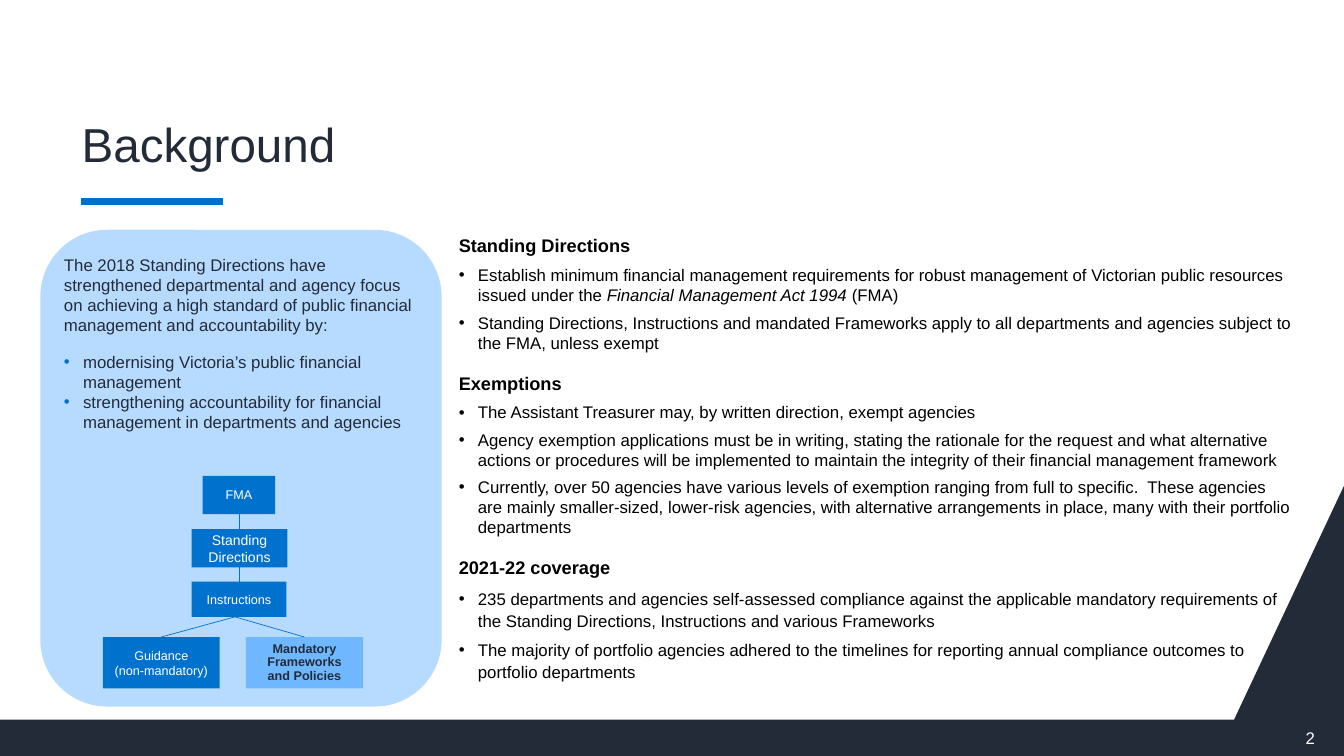
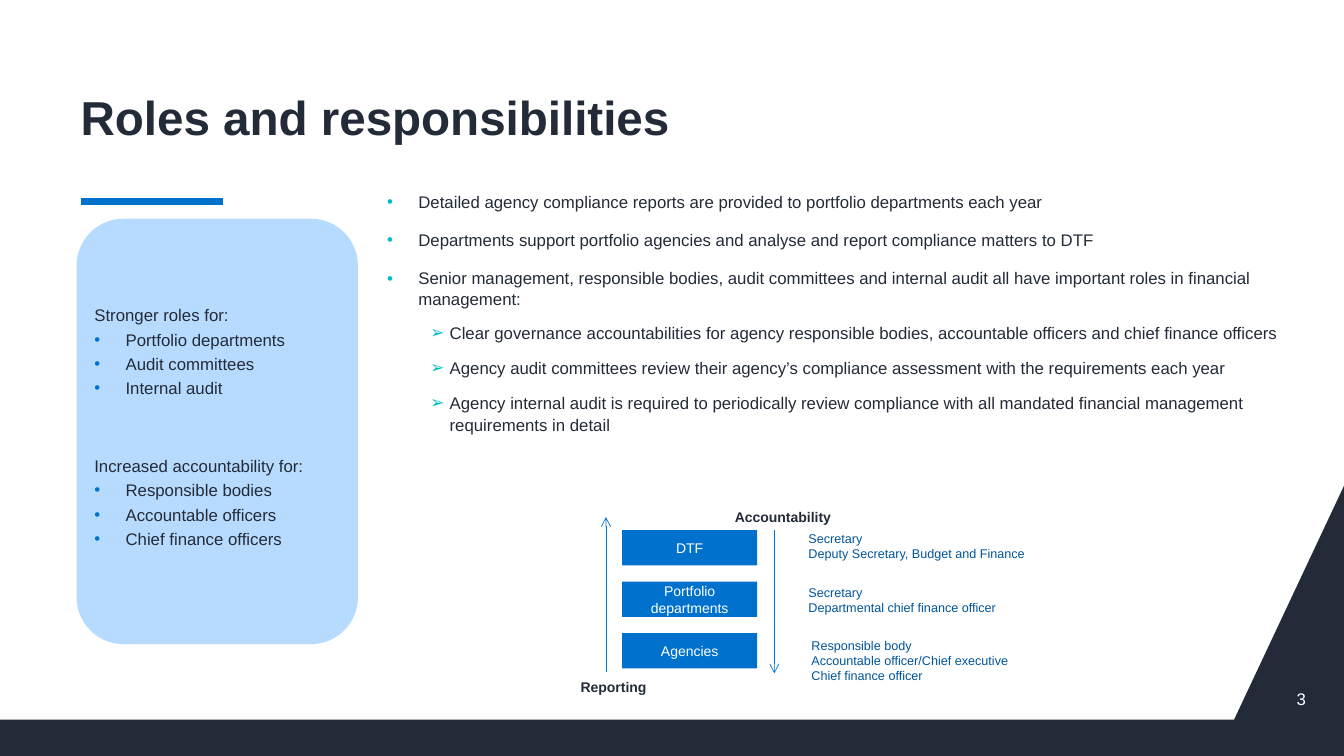
import pptx
import pptx.dml.color
import pptx.enum.shapes
import pptx.enum.text
import pptx.oxml
import pptx.oxml.ns
import pptx.util
from pptx.util import Inches, Pt

RGBColor = pptx.dml.color.RGBColor
ALIGN = pptx.enum.text.PP_ALIGN
ANCHOR = pptx.enum.text.MSO_ANCHOR
SHAPE = pptx.enum.shapes.MSO_SHAPE

NAVY = RGBColor(0x23, 0x2B, 0x39)
BLUE = RGBColor(0x00, 0x72, 0xCE)
SKY = RGBColor(0x6F, 0xB8, 0xFF)
PALE = RGBColor(0xB7, 0xDB, 0xFF)
DEEP = RGBColor(0x00, 0x55, 0x9B)
TEAL = RGBColor(0x00, 0xBA, 0xC7)
BLACK = RGBColor(0, 0, 0)
WHITE = RGBColor(0xFF, 0xFF, 0xFF)

FONT = "Arial"
SLIDE_WIDTH, SLIDE_HEIGHT = 13.33, 7.5
BAND_TOP = 7.14
TIGHT = {"margin_left": Inches(0.04), "margin_right": Inches(0.04),
         "margin_top": Inches(0.05), "margin_bottom": Inches(0.05)}
MIDDLE = {"vertical_anchor": ANCHOR.MIDDLE}


def style(size, color, bold=False, bullet=None, **layout):
    return {"font": {"name": FONT, "size": Pt(size), "bold": bold},
            "color": color, "bullet": bullet, "layout": layout}


TITLE = style(34, NAVY, line_spacing=0.9)
BOLD_TITLE = style(34, NAVY, True, line_spacing=0.9)
NUMBER = style(12, WHITE, alignment=ALIGN.RIGHT)
HEADING = style(13, BLACK, True, space_before=Pt(10.7), space_after=Pt(4))
POINT = style(12, BLACK, bullet=("•", None, 0.19, 0.19),
              space_before=Pt(2), space_after=Pt(3))
LOOSE_POINT = style(12, BLACK, bullet=("•", None, 0.19, 0.19),
                    space_before=Pt(2), space_after=Pt(3), line_spacing=1.1)
PANEL_INTRO = style(12, NAVY, space_after=Pt(12))
PANEL_POINT = style(12, NAVY, bullet=("•", BLUE, 0.19, 0.19))
ROLE_HEADING = style(12, NAVY, space_before=Pt(38), space_after=Pt(3))
ROLE_POINT = style(12, NAVY, bullet=("•", BLUE, 0.31, 0.31), space_after=Pt(3))
DUTY = style(12, NAVY, bullet=("•", TEAL, 0.31, 0.31),
             space_before=Pt(10), space_after=Pt(3))
SUB_DUTY = style(12, NAVY, bullet=("➢", TEAL, 0.62, 0.19), line_spacing=1.1,
                 space_before=Pt(6), space_after=Pt(3))
NODE = style(9, WHITE, alignment=ALIGN.CENTER)
LARGE_NODE = style(10, WHITE, alignment=ALIGN.CENTER)
LIGHT_NODE = style(9, NAVY, True, alignment=ALIGN.CENTER, line_spacing=0.9)
ARROW_LABEL = style(10, NAVY, True)
CONTACT = style(9, DEEP)


def assign(target, values):
    for name, value in values.items():
        setattr(target, name, value)


def add_element(parent, tag, **attributes):
    element = pptx.oxml.parse_xml(f"<a:{tag} {pptx.oxml.ns.nsdecls('a')}/>")
    for name, value in attributes.items():
        element.set(name, value)
    parent.append(element)
    return element


def add_bullet(para, mark, color, left, hanging):
    properties = para._p.get_or_add_pPr()
    properties.set("marL", str(Inches(left)))
    properties.set("indent", str(-Inches(hanging)))
    if color is not None:
        add_element(add_element(properties, "buClr"), "srgbClr", val=str(color))
    add_element(properties, "buFont", typeface=FONT)
    add_element(properties, "buChar", char=mark)


def write(frame, groups, frame_format):
    assign(frame, {"word_wrap": True, **frame_format})
    lines = [(look, text) for look, texts in groups for text in texts]
    for index, (look, text) in enumerate(lines):
        para = frame.add_paragraph() if index else frame.paragraphs[0]
        assign(para, {"alignment": ALIGN.LEFT, **look["layout"]})
        if look["bullet"]:
            add_bullet(para, *look["bullet"])
        spans = [(text, False)] if isinstance(text, str) else text
        for words, italic in spans:
            span = para.add_run()
            span.text = words
            assign(span.font, {**look["font"], "italic": italic})
            span.font.color.rgb = look["color"]


def add_text(page, place, groups, frame_format=None):
    box = page.shapes.add_textbox(*map(Inches, place))
    write(box.text_frame, groups, frame_format or {})


def paint(shape, fill):
    shape.shadow.inherit = False
    shape.fill.solid()
    shape.fill.fore_color.rgb = fill
    shape.line.fill.background()


def add_box(page, kind, place, fill, groups, frame_format):
    box = page.shapes.add_shape(kind, *map(Inches, place))
    paint(box, fill)
    write(box.text_frame, groups, frame_format)


def add_panel(page, place, groups, top_margin=0.05):
    add_box(page, SHAPE.ROUNDED_RECTANGLE, place, PALE, groups,
            {**TIGHT, "margin_top": Inches(top_margin), "vertical_anchor": ANCHOR.TOP})


def add_node(page, place, look, lines, fill=BLUE):
    add_box(page, SHAPE.RECTANGLE, place, fill, [(look, lines)], MIDDLE)


def add_line(page, start, end, width=0.5, arrow=False):
    line = page.shapes.add_connector(pptx.enum.shapes.MSO_CONNECTOR.STRAIGHT,
                                     *map(Inches, (*start, *end)))
    line.line.color.rgb = BLUE
    line.line.width = Pt(width)
    if arrow:
        add_element(line.line._get_or_add_ln(), "tailEnd", type="arrow")
    add_element(line._element.spPr, "effectLst")


def add_page(deck, title, title_place, title_look, number, number_place):
    page = deck.slides.add_slide(deck.slide_layouts[6])
    outline = [(12.24, BAND_TOP), (0, BAND_TOP), (0, SLIDE_HEIGHT),
               (SLIDE_WIDTH, SLIDE_HEIGHT), (SLIDE_WIDTH, 4.82)]
    points = [(Inches(x), Inches(y)) for x, y in outline]
    builder = page.shapes.build_freeform(*points[0])
    builder.add_line_segments(points[1:], close=True)
    paint(builder.convert_to_shape(), NAVY)
    add_line(page, (0.8, 2), (2.21, 2), 4.5)
    add_text(page, title_place, [(title_look, [title])],
             {**TIGHT, "vertical_anchor": ANCHOR.BOTTOM})
    add_text(page, (*number_place, 0.48, 0.4), [(NUMBER, [number])], MIDDLE)
    return page


def add_background(deck):
    page = add_page(deck, "Background", (0.77, 0.92, 3.24, 0.84), TITLE,
                    "2", (12.66, 7.12))
    add_text(page, (4.51, 2.28, 8.35, 4.73), [
        (HEADING, ["Standing Directions"]),
        (POINT, [
            [("Establish minimum financial management requirements for robust management of "
              "Victorian public resources issued under the ", False),
             ("Financial Management Act 1994 ", True), ("(FMA)", False)],
            "Standing Directions, Instructions and mandated Frameworks apply to all departments "
            "and agencies subject to the FMA, unless exempt"]),
        (HEADING, ["Exemptions"]),
        (POINT, [
            "The Assistant Treasurer may, by written direction, exempt agencies",
            "Agency exemption applications must be in writing, stating the rationale for the "
            "request and what alternative actions or procedures will be implemented to maintain "
            "the integrity of their financial management framework",
            "Currently, over 50 agencies have various levels of exemption ranging from full to "
            "specific.  These agencies are mainly smaller-sized, lower-risk agencies, with "
            "alternative arrangements in place, many with their portfolio departments"]),
        (HEADING, ["2021-22 coverage"]),
        (LOOSE_POINT, [
            "235 departments and agencies self-assessed compliance against the applicable "
            "mandatory requirements of the Standing Directions, Instructions and various Frameworks",
            "The majority of portfolio agencies adhered to the timelines for reporting annual "
            "compliance outcomes to portfolio departments"]),
    ], TIGHT)
    add_panel(page, (0.4, 2.28, 3.98, 4.73), [
        (PANEL_INTRO, [
            "The 2018 Standing Directions have strengthened departmental and agency focus on "
            "achieving a high standard of public financial management and accountability by:"]),
        (PANEL_POINT, [
            "modernising Victoria’s public financial management",
            "strengthening accountability for financial management in departments and agencies"]),
    ])
    add_node(page, (2.01, 4.72, 0.72, 0.38), NODE, ["FMA"])
    add_node(page, (1.9, 5.25, 0.95, 0.38), LARGE_NODE, ["Standing", "Directions"])
    add_node(page, (1.9, 5.77, 0.94, 0.35), NODE, ["Instructions"])
    add_node(page, (1.02, 6.32, 1.16, 0.51), NODE, ["Guidance", "(non-mandatory)"])
    add_node(page, (2.44, 6.32, 1.16, 0.51), LIGHT_NODE,
             ["Mandatory Frameworks and Policies"], SKY)
    for start, end in [((2.37, 5.1), (2.37, 5.25)), ((2.37, 5.63), (2.37, 5.77)),
                       ((2.33, 6.12), (1.6, 6.32)), ((2.33, 6.12), (3.02, 6.32))]:
        add_line(page, start, end)


def add_roles(deck):
    page = add_page(deck, "Roles and responsibilities", (0.76, 0.37, 11.5, 1.13), BOLD_TITLE,
                    "3", (12.57, 6.73))
    add_text(page, (3.8, 1.85, 9.34, 5.1), [
        (DUTY, [
            "Detailed agency compliance reports are provided to portfolio departments each year",
            "Departments support portfolio agencies and analyse and report compliance matters to DTF",
            "Senior management, responsible bodies, audit committees and internal audit all have "
            "important roles in financial management:"]),
        (SUB_DUTY, [
            "Clear governance accountabilities for agency responsible bodies, accountable officers "
            "and chief finance officers",
            "Agency audit committees review their agency’s compliance assessment with the "
            "requirements each year",
            "Agency internal audit is required to periodically review compliance with all mandated "
            "financial management requirements in detail"]),
    ], TIGHT)
    add_panel(page, (0.76, 2.17, 2.79, 4.22), [
        (ROLE_HEADING, ["Stronger roles for:"]),
        (ROLE_POINT, ["Portfolio departments", "Audit committees", "Internal audit"]),
        (ROLE_HEADING, ["Increased accountability for:"]),
        (ROLE_POINT, ["Responsible bodies", "Accountable officers", "Chief finance officers"]),
    ], 0.72)
    levels = [
        ("DTF", 7.92, ["Secretary", "Deputy Secretary, Budget and Finance"]),
        ("Portfolio departments", 7.92, ["Secretary", "Departmental chief finance officer"]),
        ("Agencies", 7.95, ["Responsible body", "Accountable officer/Chief executive",
                            "Chief finance officer"]),
    ]
    for index, (level, left, contacts) in enumerate(levels):
        add_node(page, (6.17, 5.26 + 0.51 * index, 1.34, 0.35), LARGE_NODE, [level])
        add_text(page, (left, 5.22 + 0.53 * index, 2.6, 0.4), [(CONTACT, contacts)])
    add_line(page, (6.01, 6.67), (6.01, 5.13), arrow=True)
    add_line(page, (7.68, 5.26), (7.68, 6.68), arrow=True)
    add_text(page, (5.66, 6.68, 1.12, 0.27), [(ARROW_LABEL, ["Reporting"])])
    add_text(page, (7.19, 5, 1.34, 0.27), [(ARROW_LABEL, ["Accountability"])])


def main():
    deck = pptx.Presentation()
    assign(deck, {"slide_width": Inches(SLIDE_WIDTH), "slide_height": Inches(SLIDE_HEIGHT)})
    add_background(deck)
    add_roles(deck)
    deck.save("out.pptx")


if __name__ == "__main__":
    main()
